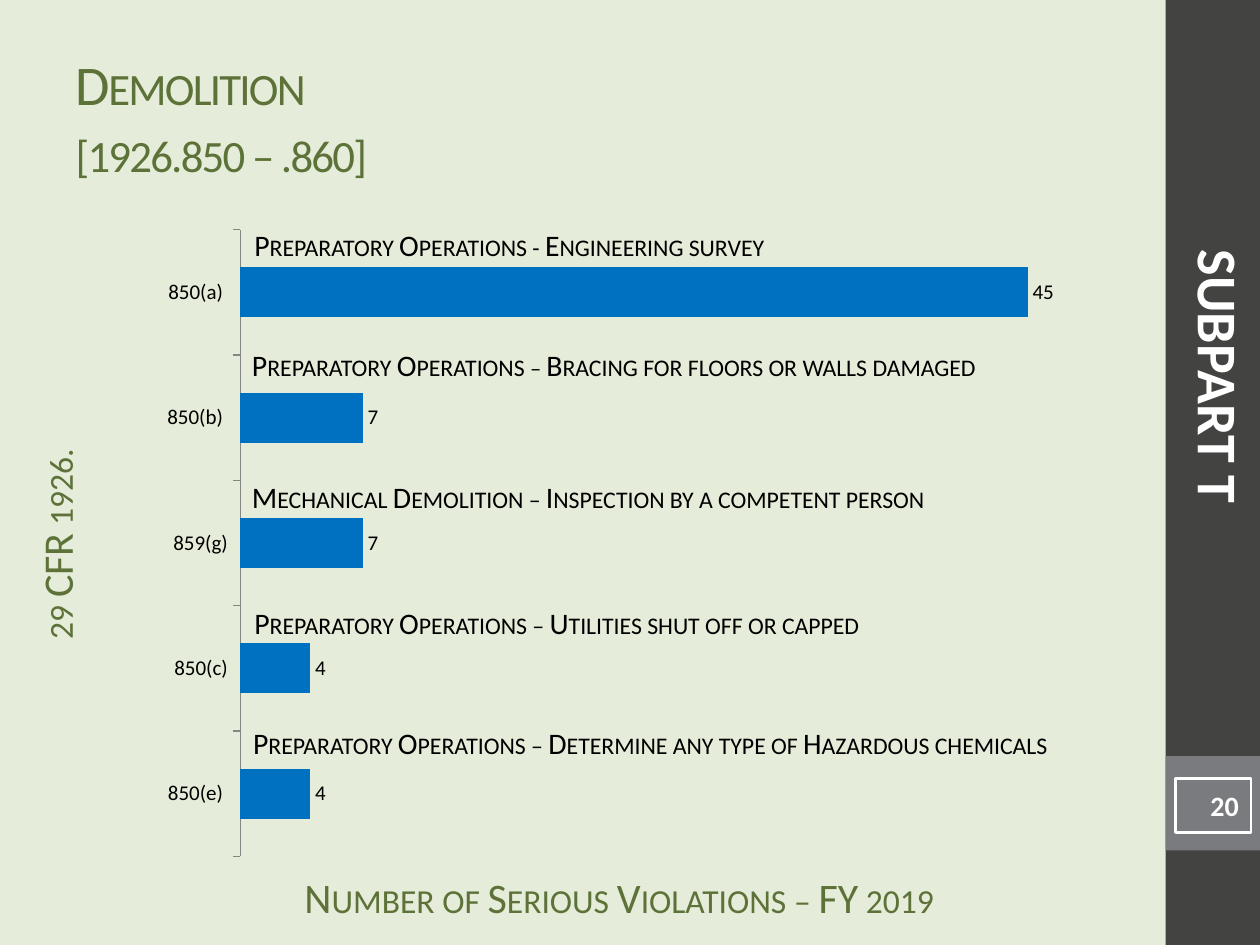
from pptx import Presentation
from pptx import util as u
from pptx.chart.data import CategoryChartData
from pptx.dml.color import RGBColor
from pptx.enum import chart as ch, shapes, text

Inches, Pt = u.Inches, u.Pt
COLORS = {"back": "E5ECD9", "band": "434342", "tab": "797B7E", "green": "5D7238",
          "bar": "0070C0", "axis": "868686", "black": "000000", "white": "FFFFFF"}
rgb = {name: RGBColor.from_string(value) for name, value in COLORS.items()}


def add_span(para, words, size, color, bold=False, small=False):
    span = para.add_run()
    span.text = words
    span.font.name, span.font.size, span.font.bold = "Calibri", Pt(size), bold
    span.font.color.rgb = rgb[color]
    if small:
        span._r.get_or_add_rPr().set("cap", "small")
    return span


def add_label(place, spans, color, margins, align=text.PP_ALIGN.LEFT,
              turn=0, wrap=True, bold=False, small=True):
    box = page.shapes.add_textbox(*[Inches(v) for v in place])
    box.rotation = turn
    frame = box.text_frame
    frame.word_wrap = wrap
    (frame.margin_left, frame.margin_top,
     frame.margin_right, frame.margin_bottom) = [Inches(v) for v in margins]
    para = frame.paragraphs[0]
    para.alignment = align
    for words, size in spans:
        add_span(para, words, size, color, bold, small)


deck = Presentation()
deck.slide_width, deck.slide_height = Inches(10), Inches(7.5)
page = deck.slides.add_slide(deck.slide_layouts[5])
page.background.fill.solid()
page.background.fill.fore_color.rgb = rgb["back"]

# Side band and page number tab
for top, height, color in [(0, 7.5, "band"), (6, 0.75, "tab")]:
    band = page.shapes.add_shape(shapes.MSO_SHAPE.RECTANGLE, Inches(9.25), Inches(top),
                                 Inches(0.75), Inches(height))
    band.shadow.inherit = False
    band.fill.solid()
    band.fill.fore_color.rgb = rgb[color]
    band.line.fill.background()

# Axis captions
center = text.PP_ALIGN.CENTER
caption_margins = (0.1, 0, 0.1, 0.05)
add_label((2.08, 6.92, 5.67, 0.33), [("Number of Serious Violations – FY 2019", 24)],
          "green", caption_margins, center)
add_label((-1.56, 4.03, 4.19, 0.58), [("29 CFR 1926.", 24)],
          "green", caption_margins, center, turn=270)

# Bar chart
data = CategoryChartData()
data.categories = ["850(e) ", "850(c)", "859(g)", "850(b) ", "850(a) "]
data.add_series("Series 1", [4, 4, 7, 7, 45])
chart = page.shapes.add_chart(ch.XL_CHART_TYPE.BAR_CLUSTERED, Inches(1.25), Inches(1.67),
                              Inches(7.82), Inches(5.28), data).chart
chart.has_legend = chart.has_title = False
chart.font.name, chart.font.size = "Calibri", Pt(10)
chart.font.color.rgb = rgb["black"]

category_axis, value_axis = chart.category_axis, chart.value_axis
category_axis.major_tick_mark = ch.XL_TICK_MARK.OUTSIDE
category_axis.tick_labels.font.size = Pt(12)
category_axis.format.line.color.rgb = rgb["axis"]
value_axis.minimum_scale, value_axis.maximum_scale = 0, 50
value_axis.has_major_gridlines = False
value_axis.visible = False

plot = chart.plots[0]
plot.gap_width = 150
plot.vary_by_categories = False
bars = plot.series[0]
bars.format.fill.solid()
bars.format.fill.fore_color.rgb = rgb["bar"]
plot.has_data_labels = True
labels = plot.data_labels
labels.show_value = True
labels.position = ch.XL_LABEL_POSITION.OUTSIDE_END
labels.font.size = Pt(12)

# Fixed inner plot area
plot_area = chart._chartSpace.chart.plotArea
for old in plot_area.findall("{*}layout"):
    plot_area.remove(old)
layout = plot_area.makeelement(plot_area.tag.replace("plotArea", "layout"))
plot_area.insert(0, layout)
manual = layout.makeelement(layout.tag.replace("layout", "manualLayout"))
layout.append(manual)
for name, value in [("layoutTarget", "inner"), ("xMode", "edge"), ("yMode", "edge"),
                    ("x", "0.084"), ("y", "0.029"), ("w", "0.888"), ("h", "0.942")]:
    part = manual.makeelement(layout.tag.replace("layout", name))
    part.set("val", value)
    manual.append(part)

# Title
title = page.shapes.title
title.left, title.top, title.width, title.height = [Inches(v) for v in (0.5, 0.3, 8.33, 1.25)]
title.text_frame.vertical_anchor = text.MSO_ANCHOR.MIDDLE
title.text_frame.word_wrap = True
para = title.text_frame.paragraphs[0]
para.alignment = text.PP_ALIGN.LEFT
for number, words in enumerate(["Demolition", "[1926.850 – .860]"]):
    if number:
        para.add_line_break()
    span = add_span(para, words, 32, "green", small=True)
    span._r.get_or_add_rPr().set("spc", "-100")

# Page number
box = page.shapes.add_shape(shapes.MSO_SHAPE.RECTANGLE, Inches(9.33), Inches(6.18),
                            Inches(0.6), Inches(0.43))
box.shadow.inherit = False
box.fill.background()
box.line.color.rgb = rgb["white"]
box.line.width = Pt(1.5)
para = box.text_frame.paragraphs[0]
para.alignment = text.PP_ALIGN.RIGHT
add_span(para, "20", 16, "white", bold=True)

# Descriptions above the bars
tight, normal = (0, 0, 0, 0), (0.1, 0.05, 0.1, 0.05)
descriptions = [
    ((1.92, 1.75, 6.5, 0.39), normal, True,
     [("Preparatory Operations - Engineering survey", 17)]),
    ((2, 2.75, 7, 0.33), tight, True,
     [("Preparatory Operations ", 17), ("– ", 16),
      ("Bracing for floors or walls damaged", 17), (" ", 16)]),
    ((2, 3.8, 6.84, 0.29), tight, True,
     [("Mechanical Demolition – Inspection by a competent person", 17)]),
    ((1.92, 4.75, 5.33, 0.39), normal, True,
     [("Preparatory Operations – Utilities shut off or capped", 17)]),
    ((1.91, 5.7, 6.69, 0.39), normal, False,
     [("Preparatory Operations – Determine any type of Hazardous chemicals", 17)]),
]
for place, margins, wrap, spans in descriptions:
    add_label(place, spans, "black", margins, wrap=wrap)

# Subpart name on the band
add_label((6.69, 2.67, 5.98, 0.64), [("SUBPART T", 32)], "white", normal, center,
          turn=90, bold=True, small=False)

deck.save("out.pptx")
